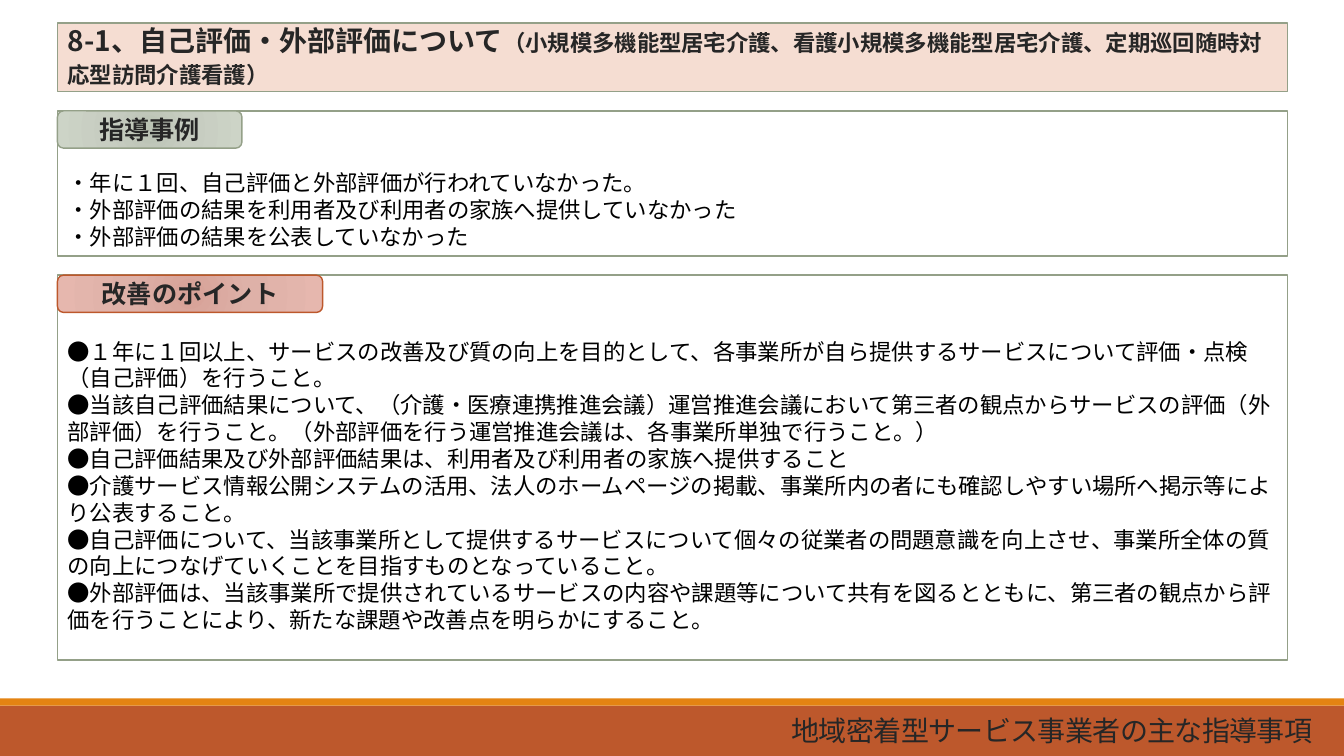
import pptx
import pptx.util
import pptx.dml.color
import pptx.enum.shapes
import pptx.enum.text
import pptx.oxml.ns
import lxml.etree

Inches = pptx.util.Inches
Pt = pptx.util.Pt
qn = pptx.oxml.ns.qn
ALIGN = pptx.enum.text.PP_ALIGN
ANCHOR = pptx.enum.text.MSO_ANCHOR
SHAPE = pptx.enum.shapes.MSO_SHAPE

FONT = "Noto Sans CJK JP"
INK = "262626"
SAGE = "94A088"
RUST = "BD582C"
MARGIN = 0.57
WIDTH = 12.2
LABEL_HEIGHT = 0.37

CASES = [
    "・年に１回、自己評価と外部評価が行われていなかった。",
    "・外部評価の結果を利用者及び利用者の家族へ提供していなかった",
    "・外部評価の結果を公表していなかった",
]
IMPROVEMENTS = [
    "●１年に１回以上、サービスの改善及び質の向上を目的として、各事業所が自ら提供するサービスについて評価・点検（自己評価）を行うこと。",
    "●当該自己評価結果について、（介護・医療連携推進会議）運営推進会議において第三者の観点からサービスの評価（外部評価）を行うこと。（外部評価を行う運営推進会議は、各事業所単独で行うこと。）",
    "●自己評価結果及び外部評価結果は、利用者及び利用者の家族へ提供すること",
    "●介護サービス情報公開システムの活用、法人のホームページの掲載、事業所内の者にも確認しやすい場所へ掲示等により公表すること。",
    "●自己評価について、当該事業所として提供するサービスについて個々の従業者の問題意識を向上させ、事業所全体の質の向上につなげていくことを目指すものとなっていること。",
    "●外部評価は、当該事業所で提供されているサービスの内容や課題等について共有を図るとともに、第三者の観点から評価を行うことにより、新たな課題や改善点を明らかにすること。",
]


def color(value):
    return pptx.dml.color.RGBColor.from_string(value)


def add_text(paragraph, text, size=16, ink=INK, bold=False, align=ALIGN.LEFT,
             leading=None, tracking=None):
    paragraph.alignment = align
    paragraph.space_before = paragraph.space_after = Pt(0)
    if leading:
        paragraph.line_spacing = leading
    run = paragraph.add_run()
    run.text = text
    run.font.name = FONT
    run.font.size = Pt(size)
    run.font.bold = bold
    run.font.color.rgb = color(ink)
    properties = run.font._element
    lxml.etree.SubElement(properties, qn("a:ea")).set("typeface", FONT)
    if tracking:
        properties.set("spc", str(int(tracking * 100)))


def place(part, box):
    part.left, part.top, part.width, part.height = map(Inches, box)


def paint(part, fill, line=None, line_width=1):
    part.fill.solid()
    part.fill.fore_color.rgb = color(fill)
    if line:
        part.line.color.rgb = color(line)
        part.line.width = Pt(line_width)
    else:
        part.line.fill.background()


def set_frame(part, anchor, top=0.05):
    frame = part.text_frame
    frame.word_wrap = True
    frame.auto_size = pptx.enum.text.MSO_AUTO_SIZE.NONE
    frame.vertical_anchor = anchor
    frame.margin_left = frame.margin_right = Inches(0.1)
    frame.margin_top = Inches(top)
    frame.margin_bottom = Inches(0.05)
    return frame


def add_heading(heading, box):
    place(heading, box)
    paint(heading, "F5DDD2", SAGE)
    paragraph = set_frame(heading, ANCHOR.MIDDLE).paragraphs[0]
    add_text(paragraph, "8-1、自己評価・外部評価について", size=20, bold=True, leading=Pt(22))
    add_text(paragraph, "（小規模多機能型居宅介護、看護小規模多機能型居宅介護、定期巡回随時対応型訪問介護看護）",
             bold=True, leading=Pt(22))


def add_label(slide, text, box, stops, line):
    label = slide.shapes.add_shape(SHAPE.ROUNDED_RECTANGLE, *map(Inches, box))
    label.shadow.inherit = False
    paint(label, stops[0], line)
    label.fill.gradient()
    gradient = label._element.spPr.find(qn("a:gradFill"))
    for child in list(gradient):
        gradient.remove(child)
    stop_list = lxml.etree.SubElement(gradient, qn("a:gsLst"))
    for position, value in zip((0, 45, 100), stops):
        stop = lxml.etree.SubElement(stop_list, qn("a:gs"), pos=str(position * 1000))
        lxml.etree.SubElement(stop, qn("a:srgbClr"), val=value)
    focus = lxml.etree.SubElement(gradient, qn("a:path"), path="circle")
    lxml.etree.SubElement(focus, qn("a:fillToRect"), **dict.fromkeys("ltrb", "100000"))
    frame = set_frame(label, ANCHOR.MIDDLE)
    add_text(frame.paragraphs[0], text, size=18, bold=True, align=ALIGN.CENTER)


def add_section(slide, body, items, box, text_top, label, label_width, stops, label_line):
    place(body, box)
    paint(body, "FFFFFF", SAGE, 1.25)
    frame = set_frame(body, ANCHOR.TOP, text_top)
    for index, item in enumerate(items):
        paragraph = frame.add_paragraph() if index else frame.paragraphs[0]
        add_text(paragraph, item, ink="000000", leading=Pt(19.2))
        properties = paragraph._p.get_or_add_pPr()
        properties.set("marL", "0")
        properties.set("indent", "0")
        lxml.etree.SubElement(properties, qn("a:buNone"))
    left, top = box[:2]
    add_label(slide, label, (left, top, label_width, LABEL_HEIGHT), stops, label_line)


def add_footer(slide, box):
    left, top, width, height = box
    stripe = 0.07
    for band_top, band_height, fill in ((top + stripe, height - stripe, RUST),
                                        (top, stripe, "E48312")):
        band = slide.shapes.add_shape(SHAPE.RECTANGLE, *map(Inches, (left, band_top, width, band_height)))
        band.shadow.inherit = False
        paint(band, fill)
    caption = slide.shapes.add_textbox(
        *map(Inches, (left + MARGIN, top + 0.11, 12.54, 0.46)))
    add_text(set_frame(caption, ANCHOR.MIDDLE).paragraphs[0], "地域密着型サービス事業者の主な指導事項",
             size=20, align=ALIGN.RIGHT, leading=0.85, tracking=-0.5)


def main():
    deck = pptx.Presentation()
    deck.slide_width = Inches(13.33)
    deck.slide_height = Inches(7.5)
    slide = deck.slides.add_slide(deck.slide_layouts.get_by_name("Two Content"))
    heading, cases, improvements = slide.placeholders
    add_footer(slide, (0, 6.93, 13.33, 0.57))
    add_heading(heading, (MARGIN, 0.23, WIDTH, 0.68))
    add_section(slide, cases, CASES, (MARGIN, 1.1, WIDTH, 1.44), 0.58,
                "指導事例", 1.83, ("BBC3B5", "C7CDC1", "CDD4C7"), SAGE)
    add_section(slide, improvements, IMPROVEMENTS, (MARGIN, 2.73, WIDTH, 3.82), 0.62,
                "改善のポイント", 2.63, ("D7A197", "DEB1A8", "E6B7AE"), RUST)
    deck.save("out.pptx")


if __name__ == "__main__":
    main()
